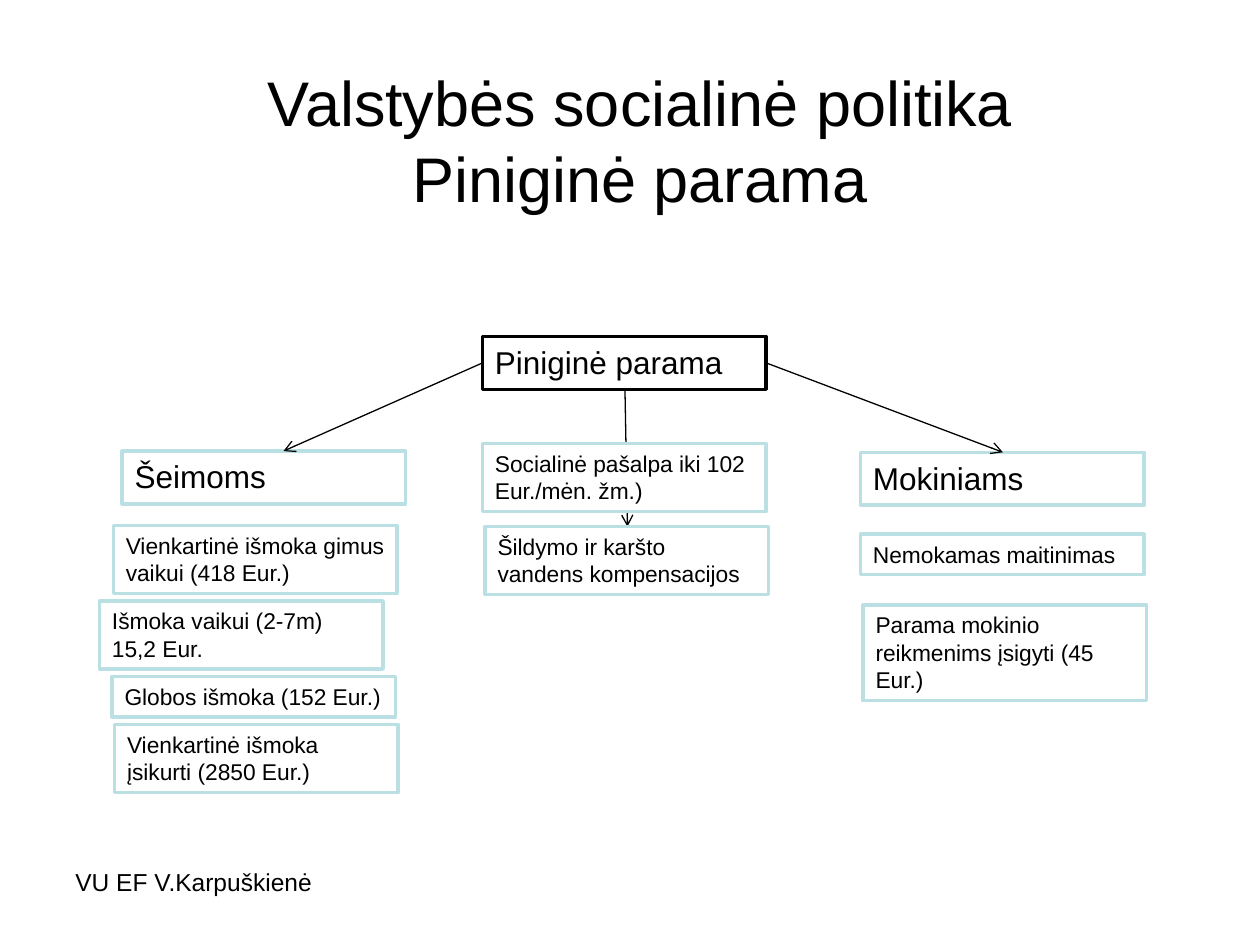
from typing import NamedTuple

from lxml import etree
from pptx import Presentation
from pptx.dml.color import RGBColor
from pptx.enum import shapes, text
from pptx.oxml.ns import qn
from pptx.util import Inches, Pt

BLACK, WHITE, PALE_TEAL = "000000", "FFFFFF", "BBE0E3"
BOX_WIDTH = 2.25
HEADING, DETAIL = 18, 13


class Box(NamedTuple):
    label: str
    left: float
    top: float
    height: float
    size: int = DETAIL
    border: str = PALE_TEAL


class Arrow(NamedTuple):
    start: tuple[float, float]
    end: tuple[float, float]


HEADINGS = [
    Box("Piniginė parama", 3.83, 2.67, 0.42, HEADING, BLACK),
    Box("Šeimoms", 0.97, 3.58, 0.42, HEADING),
    Box("Mokiniams", 6.83, 3.59, 0.42, HEADING),
]
ARROWS = [
    Arrow((3.83, 2.88), (2.25, 3.58)),
    Arrow((4.96, 3.08), (4.98, 4.18)),
    Arrow((6.08, 2.88), (7.96, 3.59)),
]
BENEFITS = [
    # Families
    Box("Vienkartinė išmoka gimus vaikui (418 Eur.)", 0.9, 4.17, 0.54),
    Box("Išmoka vaikui (2-7m) 15,2 Eur.", 0.79, 4.77, 0.54),
    Box("Globos išmoka (152 Eur.)", 0.89, 5.37, 0.32),
    Box("Vienkartinė išmoka įsikurti (2850 Eur.)", 0.91, 5.75, 0.54),
    # Social assistance
    Box("Socialinė pašalpa iki 102 Eur./mėn. žm.)", 3.83, 3.52, 0.54),
    Box("Šildymo ir karšto vandens kompensacijos", 3.85, 4.18, 0.54),
    # Pupils
    Box("Nemokamas maitinimas", 6.83, 4.24, 0.32),
    Box("Parama mokinio reikmenims įsigyti (45 Eur.)", 6.85, 4.8, 0.76),
]


def rgb(value: str) -> RGBColor:
    return RGBColor.from_string(value)


def write(frame, words: str, size: int, align=text.PP_ALIGN.LEFT,
          anchor=text.MSO_ANCHOR.TOP) -> None:
    frame.text = words
    layout = {"word_wrap": True, "vertical_anchor": anchor,
              "auto_size": text.MSO_AUTO_SIZE.NONE}
    for name, value in layout.items():
        setattr(frame, name, value)
    paragraph = frame.paragraphs[0]
    paragraph.alignment = align
    for run in paragraph.runs:
        for name, value in {"name": "Arial", "size": Pt(size)}.items():
            setattr(run.font, name, value)
        run.font.color.rgb = rgb(BLACK)


def draw_box(slide, box: Box) -> None:
    rectangle = slide.shapes.add_shape(
        shapes.MSO_SHAPE.RECTANGLE, Inches(box.left), Inches(box.top),
        Inches(BOX_WIDTH), Inches(box.height))
    rectangle.shadow.inherit = False
    rectangle.fill.solid()
    rectangle.fill.fore_color.rgb = rgb(WHITE)
    rectangle.line.color.rgb = rgb(box.border)
    rectangle.line.width = Pt(2)
    write(rectangle.text_frame, box.label, box.size)
    rectangle.text_frame.auto_size = text.MSO_AUTO_SIZE.SHAPE_TO_FIT_TEXT


def draw_arrow(slide, arrow: Arrow) -> None:
    points = [Inches(value) for value in arrow.start + arrow.end]
    connector = slide.shapes.add_connector(
        shapes.MSO_CONNECTOR.STRAIGHT, *points)
    connector.line.color.rgb = rgb(BLACK)
    connector.line.width = Pt(0.75)
    etree.SubElement(connector.line._get_or_add_ln(), qn("a:tailEnd"),
                     type="arrow")
    etree.SubElement(connector._element.spPr, qn("a:effectLst"))


def main() -> None:
    deck = Presentation()
    deck.slide_width, deck.slide_height = Inches(10), Inches(7.5)
    slide = deck.slides.add_slide(deck.slide_layouts[5])

    # Title
    title = slide.shapes.title
    place = {"left": 0.58, "top": 0.33, "width": 9, "height": 1.55}
    for name, value in place.items():
        setattr(title, name, Inches(value))
    write(title.text_frame, "Valstybės socialinė politika\vPiniginė parama",
          36, text.PP_ALIGN.CENTER, text.MSO_ANCHOR.MIDDLE)

    # Diagram: the middle arrow passes behind the benefit boxes
    for heading in HEADINGS:
        draw_box(slide, heading)
    for arrow in ARROWS:
        draw_arrow(slide, arrow)
    for benefit in BENEFITS:
        draw_box(slide, benefit)

    # Footer
    author = slide.shapes.add_textbox(
        Inches(0.5), Inches(6.83), Inches(2.33), Inches(0.52))
    write(author.text_frame, "VU EF V.Karpuškienė", 14)

    deck.save("out.pptx")


if __name__ == "__main__":
    main()
